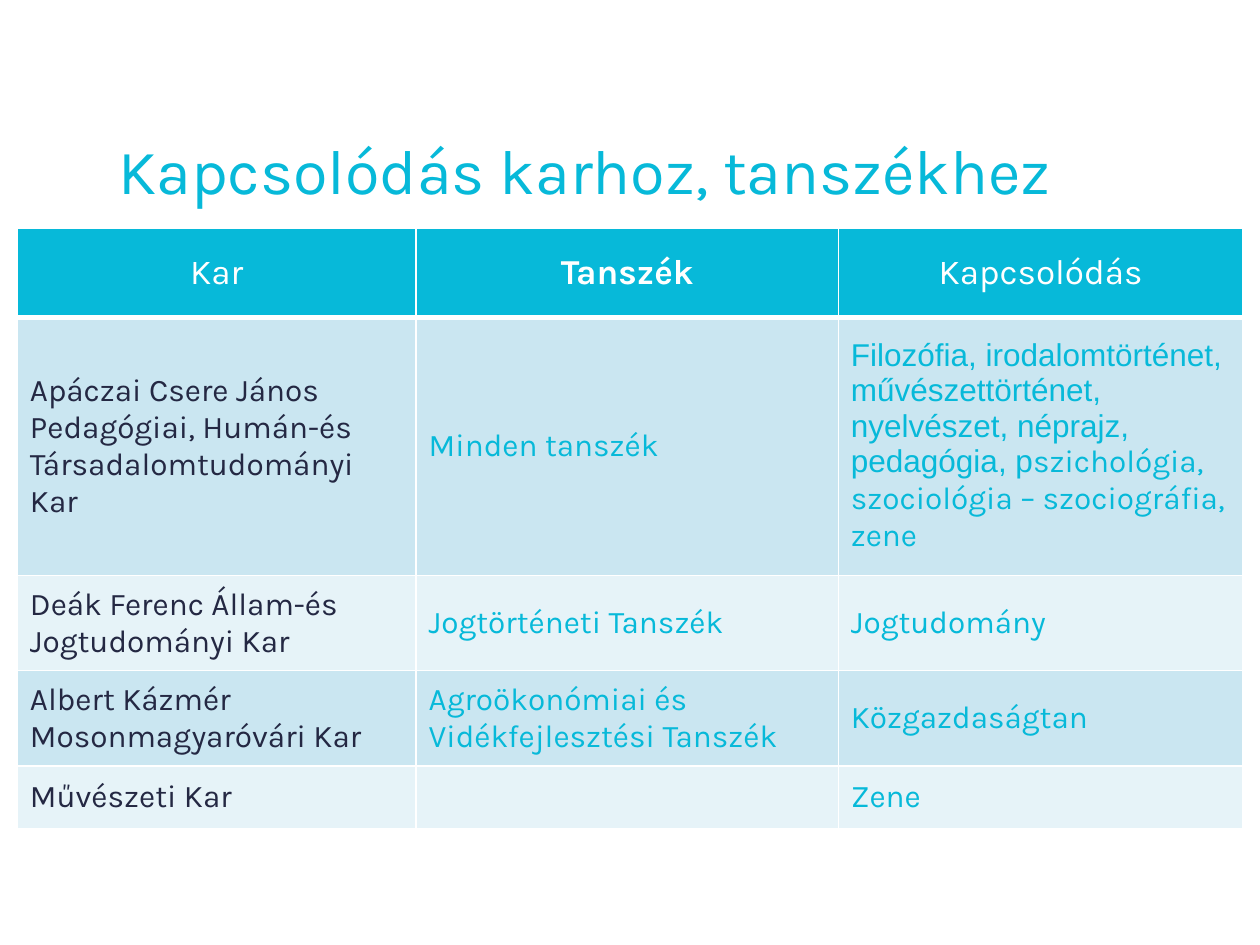
from lxml import etree
from pptx import Presentation
from pptx import util as u
from pptx.dml.color import RGBColor
from pptx.enum import text
from pptx.oxml import ns

CYAN, NAVY, WHITE = "07B9D9", "242843", "FFFFFF"
BANDS = ("CAE6F1", "E6F3F8")

HEADERS = ("Kar", "Tanszék", "Kapcsolódás")
ROWS = (
    ("Apáczai Csere János Pedagógiai, Humán-és Társadalomtudományi Kar",
     "Minden tanszék",
     (("Filozófia, irodalomtörténet, művészettörténet, nyelvészet, néprajz, "
       "pedagógia, p", "Arial"),
      ("szichológia, szociológia – szociográfia, zene", "Karla"))),
    ("Deák Ferenc Állam-és Jogtudományi Kar", "Jogtörténeti Tanszék", "Jogtudomány"),
    ("Albert Kázmér Mosonmagyaróvári Kar",
     "Agroökonómiai és Vidékfejlesztési Tanszék", "Közgazdaságtan"),
    ("Művészeti Kar", "", "Zene"),
)
COLUMN_WIDTHS = (8.04, 8.51, 8.16)
ROW_HEIGHTS = (1.8, 5.2, 1.92, 1.92, 1.27)


def color(value):
    return RGBColor.from_string(value)


def add_run(paragraph, content, size=18, font="Karla", fill=CYAN, bold=False):
    run = paragraph.add_run()
    run.text = content
    run.font.size = u.Pt(size)
    run.font.name = font
    run.font.bold = bold
    run.font.color.rgb = color(fill)


def set_borders(cell, bottom):
    """Draw white lines round a cell; they must precede its fill element."""
    properties = cell._tc.get_or_add_tcPr()
    widths = {"lnL": 1, "lnR": 1, "lnT": 1, "lnB": bottom}
    for position, (side, width) in enumerate(widths.items()):
        line = etree.Element(ns.qn("a:" + side), w=str(u.Pt(width)))
        solid = etree.SubElement(line, ns.qn("a:solidFill"))
        etree.SubElement(solid, ns.qn("a:srgbClr"), val=WHITE)
        properties.insert(position, line)


class SlideBuilder:
    def __init__(self, presentation):
        self.slide = presentation.slides.add_slide(presentation.slide_layouts[5])

    def title(self, content, left, top, width, height):
        shape = self.slide.shapes.title
        shape.left, shape.top = u.Cm(left), u.Cm(top)
        shape.width, shape.height = u.Cm(width), u.Cm(height)
        frame = shape.text_frame
        frame.word_wrap = True
        frame.auto_size = text.MSO_AUTO_SIZE.NONE
        frame.vertical_anchor = text.MSO_ANCHOR.TOP
        paragraph = frame.paragraphs[0]
        paragraph.alignment = text.PP_ALIGN.LEFT
        paragraph.line_spacing = 0.9
        add_run(paragraph, content, size=36)

    def cell(self, cell, content, background, bottom=1, align=None, **style):
        cell.fill.solid()
        cell.fill.fore_color.rgb = color(background)
        set_borders(cell, bottom)
        cell.vertical_anchor = text.MSO_ANCHOR.MIDDLE
        paragraph = cell.text_frame.paragraphs[0]
        paragraph.alignment = align
        if isinstance(content, tuple):
            for part, font in content:
                add_run(paragraph, part, font=font, **style)
        elif content:
            add_run(paragraph, content, **style)

    def table(self, left, top):
        frame = self.slide.shapes.add_table(
            len(ROW_HEIGHTS), len(COLUMN_WIDTHS), u.Cm(left), u.Cm(top),
            u.Cm(sum(COLUMN_WIDTHS)), u.Cm(sum(ROW_HEIGHTS)))
        table = frame.table
        for column, width in zip(table.columns, COLUMN_WIDTHS):
            column.width = u.Cm(width)
        for row, height in zip(table.rows, ROW_HEIGHTS):
            row.height = u.Cm(height)
        # The style's bold header is overridden for all but the middle heading
        for index, header in enumerate(HEADERS):
            self.cell(table.cell(0, index), header, CYAN, bottom=3,
                      align=text.PP_ALIGN.CENTER, size=20, fill=WHITE,
                      bold=header == "Tanszék")
        # Banded body with a dark first column
        for row_index, values in enumerate(ROWS):
            for index, value in enumerate(values):
                self.cell(table.cell(row_index + 1, index), value,
                          BANDS[row_index % 2], fill=CYAN if index else NAVY)


def main():
    presentation = Presentation()
    presentation.slide_width, presentation.slide_height = u.Cm(25.4), u.Cm(19.05)
    builder = SlideBuilder(presentation)
    builder.table(0.35, 4.6)
    builder.title("Kapcsolódás karhoz, tanszékhez", 2.13, 2.69, 21.23, 1.52)
    presentation.save("out.pptx")


if __name__ == "__main__":
    main()
